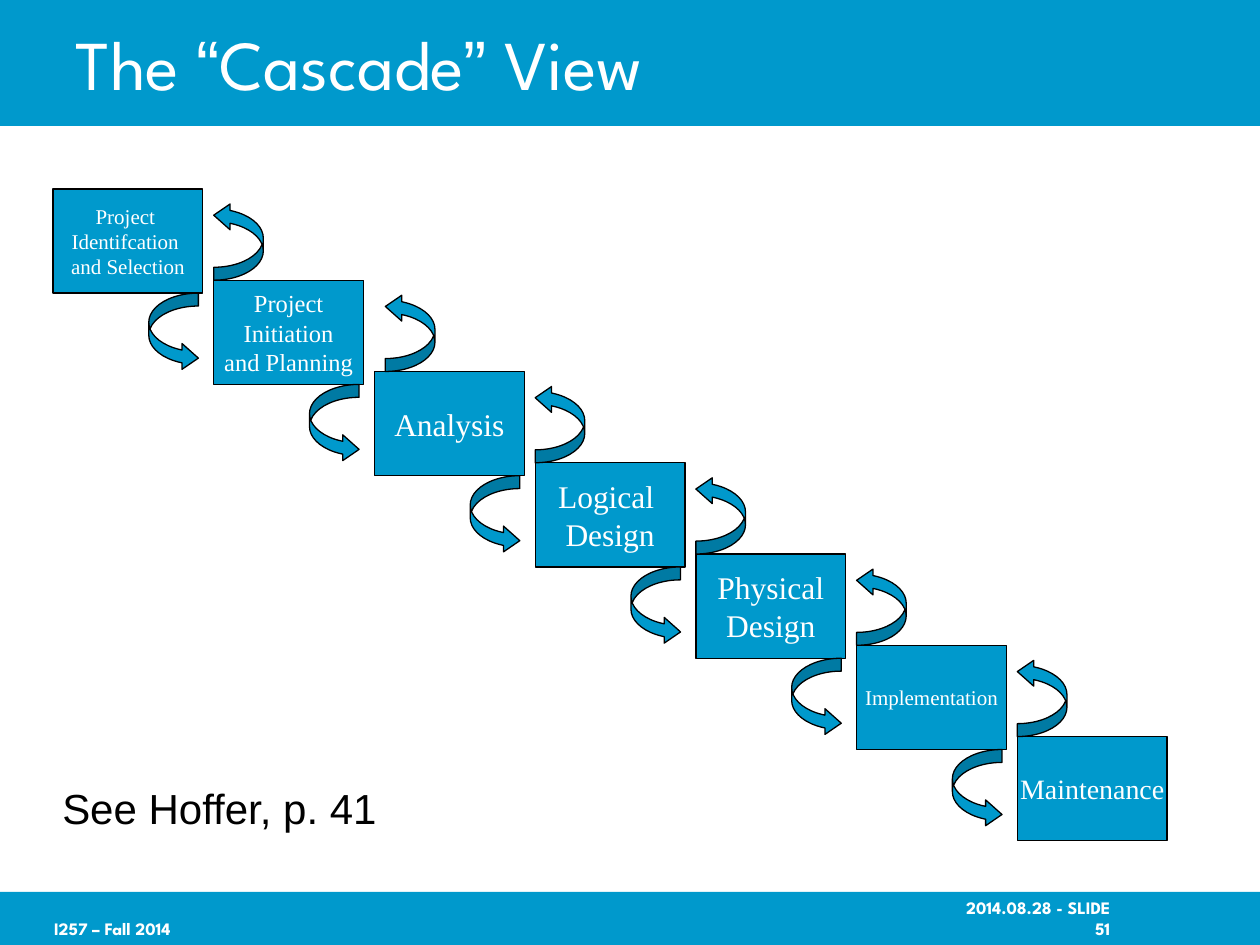
from pptx import Presentation
from pptx.dml.color import RGBColor
from pptx.enum.shapes import MSO_SHAPE
from pptx.enum.text import MSO_ANCHOR, MSO_AUTO_SIZE, PP_ALIGN
from pptx.util import Cm, Pt

RECT = MSO_SHAPE.RECTANGLE
CURVED_ARROW = MSO_SHAPE.CURVED_RIGHT_ARROW
MIDDLE, BOTTOM = MSO_ANCHOR.MIDDLE, MSO_ANCHOR.BOTTOM
LEFT, CENTER, RIGHT = PP_ALIGN.LEFT, PP_ALIGN.CENTER, PP_ALIGN.RIGHT

COLORS = {"blue": "0099CC", "white": "FFFFFF", "black": "000000"}
HEADING, SERIF, SANS = "League Spartan", "Times New Roman", "Arial"

PHASES = [
    ("Project \nIdentifcation \nand Selection", 12),
    ("Project\nInitiation\nand Planning", 14),
    ("Analysis", 18),
    ("Logical \nDesign", 18),
    ("Physical\nDesign", 18),
    ("Implementation", 12),
    ("Maintenance", 16),
]
START_X, START_Y = 1.07, 3.81
STEP_X, STEP_Y = 3.24, 1.84
BOX_W, BOX_H = 3.02, 2.1
ARROW_W, ARROW_H = 1, 1.57
DOWN_OFFSET = 1.93
ANALYSIS_SHIFT = 0.22


def color(name):
    return RGBColor.from_string(COLORS[name])


def format_run(r, size, font, fill, bold=False):
    r.font.size = Pt(size)
    r.font.name = font
    r.font.bold = bold
    r.font.color.rgb = color(fill)


def write(tf, text, size, font, fill, align=CENTER, bold=False):
    tf.text = text
    for p in tf.paragraphs:
        p.alignment = align
        for r in p.runs:
            format_run(r, size, font, fill, bold)


def add_filled(slide, kind, x, y, w, h, outlined=True):
    sp = slide.shapes.add_shape(kind, Cm(x), Cm(y), Cm(w), Cm(h))
    sp.shadow.inherit = False
    sp.fill.solid()
    sp.fill.fore_color.rgb = color("blue")
    if outlined:
        sp.line.color.rgb = color("black")
        sp.line.width = Pt(0.75)
    else:
        sp.line.fill.background()
    return sp


def add_phase(slide, x, y, text, size):
    sp = add_filled(slide, RECT, x, y, BOX_W, BOX_H)
    tf = sp.text_frame
    tf.word_wrap = False
    tf.vertical_anchor = MIDDLE
    write(tf, text, size, SERIF, "white")


def add_arrow(slide, x, y, upward):
    sp = add_filled(slide, CURVED_ARROW, x, y, ARROW_W, ARROW_H)
    for i, value in enumerate((0.26, 0.52, 0.33)):
        sp.adjustments[i] = value
    if upward:
        xfrm = sp._element.spPr.xfrm
        xfrm.set("flipH", "1")
        xfrm.set("flipV", "1")


def add_cascade(slide):
    corners = [(START_X + i * STEP_X, START_Y + i * STEP_Y)
               for i in range(len(PHASES))]
    for (x, y), (text, size) in zip(corners, PHASES):
        add_phase(slide, x, y, text, size)
    for i, (x, y) in enumerate(corners[1:], 1):
        shift = ANALYSIS_SHIFT if i == 2 else 0
        add_arrow(slide, x + shift, y - ARROW_H, upward=True)
    for x, y in corners[:-1]:
        add_arrow(slide, x + DOWN_OFFSET, y + BOX_H, upward=False)


def add_footer(slide, x, text, align, right_inset):
    tf = slide.shapes.add_textbox(Cm(x), Cm(17.98), Cm(5.28), Cm(1.07)).text_frame
    tf.word_wrap = True
    tf.vertical_anchor = BOTTOM
    tf.margin_right = Cm(right_inset)
    write(tf, text, 10, HEADING, "white", align, bold=True)


def add_title(slide):
    title = slide.shapes.title
    slide.shapes._spTree.append(title._element)
    title.left, title.top, title.width, title.height = Cm(1.27), Cm(0), Cm(21.59), Cm(2.54)
    tf = title.text_frame
    tf.vertical_anchor = MIDDLE
    tf.auto_size = MSO_AUTO_SIZE.NONE
    p = tf.paragraphs[0]
    p.alignment = LEFT
    for text in ("The ", "“", "Cascade", "”", " View"):
        r = p.add_run()
        r.text = text
        format_run(r, 40, SANS if text in "“”" else HEADING, "white")


def add_reference(slide):
    tf = slide.shapes.add_textbox(Cm(0.97), Cm(15.65), Cm(6.91), Cm(1.27)).text_frame
    tf.word_wrap = False
    tf.auto_size = MSO_AUTO_SIZE.SHAPE_TO_FIT_TEXT
    write(tf, "See Hoffer, p. 41", 24, SANS, "black")


def main():
    prs = Presentation()
    prs.slide_width, prs.slide_height = Cm(25.4), Cm(19.05)
    slide = prs.slides.add_slide(prs.slide_layouts[5])
    add_filled(slide, RECT, 0, 0, 25.4, 2.54, outlined=False)
    add_filled(slide, RECT, 0, 17.98, 25.4, 1.07, outlined=False)
    add_footer(slide, 18.85, "2014.08.28 - SLIDE 51", RIGHT, 1.75)
    add_footer(slide, 0.84, "I257 – Fall 2014", LEFT, 0)
    add_title(slide)
    add_cascade(slide)
    add_reference(slide)
    prs.save("out.pptx")


if __name__ == "__main__":
    main()
